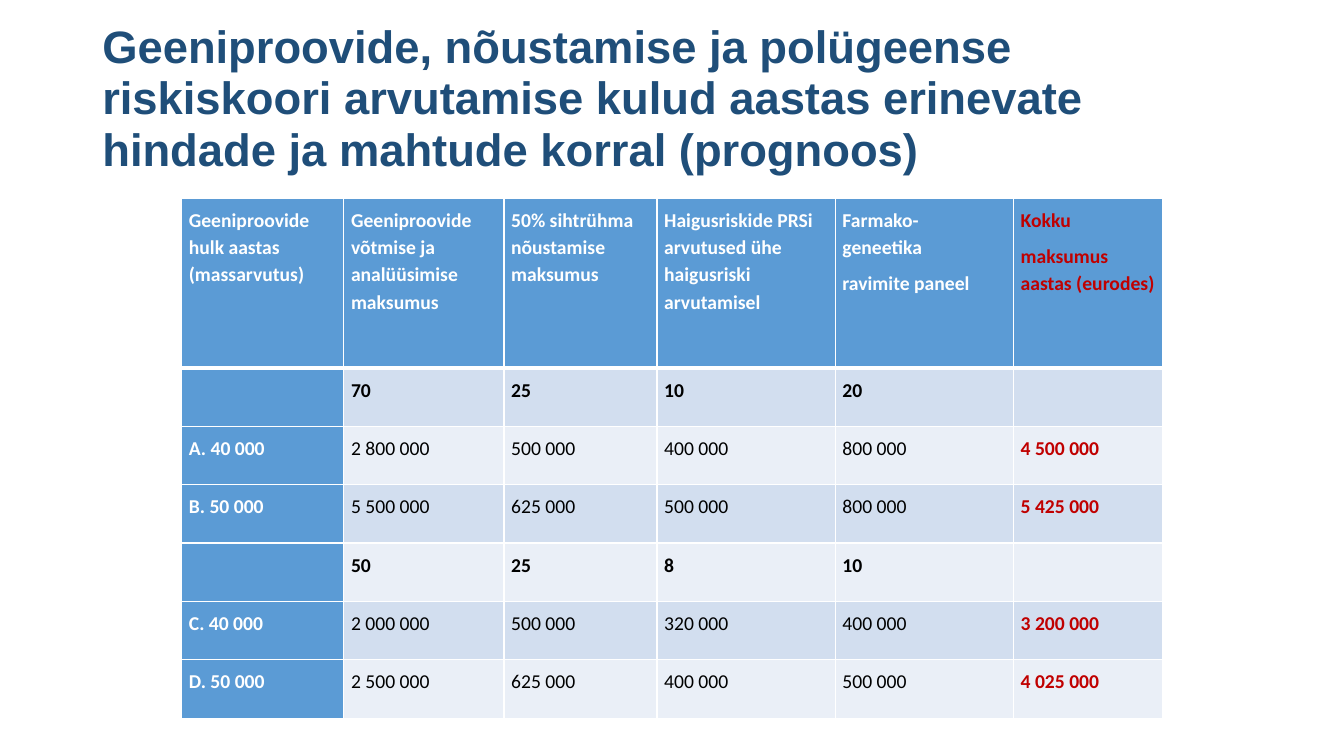
from dataclasses import dataclass

from lxml.etree import SubElement
from pptx import Presentation
from pptx.dml.color import RGBColor as Rgb
from pptx.enum.text import MSO_ANCHOR as Anchor, PP_ALIGN as Align
from pptx.oxml.ns import qn
from pptx.util import Cm, Pt


@dataclass(frozen=True)
class Theme:
    title_font: str = "Arial"
    table_font: str = "Calibri"
    title_size: float = 32.4
    table_size: float = 14
    title: str = "1F4E79"
    head: str = "5B9BD5"
    bands: tuple = ("EAEFF7", "D2DEEF")
    light: str = "FFFFFF"
    dark: str = "000000"
    total: str = "C00000"
    thin: float = 1
    thick: float = 3


THEME = Theme()

TITLE = ("Geeniproovide, nõustamise ja polügeense riskiskoori arvutamise kulud "
         "aastas erinevate hindade ja mahtude korral (prognoos)")

# Each cell is a list of paragraphs; \v is a line break
HEADINGS = [
    ["Geeniproovide hulk aastas (massarvutus)"],
    ["Geeniproovide võtmise ja analüüsimise maksumus"],
    ["50% sihtrühma nõustamise maksumus"],
    ["Haigusriskide PRSi arvutused ühe haigusriski arvutamisel"],
    ["Farmako-\vgeneetika", "ravimite paneel"],
    ["Kokku", "maksumus aastas (eurodes)"],
]
COSTS = [
    ["", "70", "25", "10", "20", ""],
    ["A. 40 000", "2 800 000", "500 000", "400 000", "800 000", "4 500 000"],
    ["B. 50 000", "5 500 000", "625 000", "500 000", "800 000", "5 425 000"],
    ["", "50", "25", "8", "10", ""],
    ["C. 40 000", "2 000 000", "500 000", "320 000", "400 000", "3 200 000"],
    ["D. 50 000", "2 500 000", "625 000", "400 000", "500 000", "4 025 000"],
]
COLUMN_SHARES = [1.61, 1.59, 1.52, 1.77, 1.77, 1.48]
HEAD_SHARE = 0.326


def set_attributes(target, values):
    for name, value in values.items():
        setattr(target, name, value)


def style_font(font, name, size, color, bold):
    set_attributes(font, {"name": name, "size": Pt(size), "bold": bold})
    font.color.rgb = Rgb.from_string(color)


def add_title(page, left, top, width, height):
    box = page.shapes.add_textbox(left, top, width, height)
    frame = box.text_frame
    # The bottom margin lifts the centred text above the table
    set_attributes(frame, {"word_wrap": True, "vertical_anchor": Anchor.MIDDLE,
                           "margin_top": 0, "margin_bottom": Cm(0.68)})
    para = frame.paragraphs[0]
    para.line_spacing = 0.94
    span = para.add_run()
    span.text = TITLE
    style_font(span.font, THEME.title_font, THEME.title_size, THEME.title, True)


def set_borders(cell, widths):
    """Draw white borders; widths are in points, per side."""
    properties = cell._tc.get_or_add_tcPr()
    for index, (side, width) in enumerate(widths.items()):
        line = properties.makeelement(qn(f"a:ln{side}"), {"w": str(Pt(width))})
        fill = SubElement(line, qn("a:solidFill"))
        SubElement(fill, qn("a:srgbClr"), val=THEME.light)
        properties.insert(index, line)


def fill_cell(cell, paragraphs, row, column):
    is_head, is_label = row == 0, column == 0
    is_total = column == len(HEADINGS) - 1
    is_price_row = not is_head and not COSTS[row - 1][0]

    # Colours follow the role of the row and the column
    background = THEME.head if is_head or is_label else THEME.bands[row % 2]
    color = (THEME.total if is_total
             else THEME.light if is_head or is_label else THEME.dark)
    bold = is_head or is_label or is_total or is_price_row
    cell.fill.solid()
    cell.fill.fore_color.rgb = Rgb.from_string(background)
    set_borders(cell, {"L": THEME.thin, "R": THEME.thin,
                       "T": THEME.thick if row == 1 else THEME.thin,
                       "B": THEME.thick if is_head else THEME.thin})

    # Text
    margin = Cm(0.18)
    set_attributes(cell, {"margin_left": margin, "margin_right": margin,
                          "margin_top": margin, "margin_bottom": margin,
                          "vertical_anchor": Anchor.TOP})
    frame = cell.text_frame
    for index, text in enumerate(paragraphs):
        para = frame.add_paragraph() if index else frame.paragraphs[0]
        para.text = text
        set_attributes(para, {"line_spacing": 1.14,
                              "alignment": Align.LEFT if is_head else Align.JUSTIFY})
        if index:
            para.space_before = Pt(6)
        for font in [para.font, *(span.font for span in para.runs)]:
            style_font(font, THEME.table_font, THEME.table_size, color, bold)


def add_cost_table(page, left, top, width, height):
    rows = [HEADINGS] + [[[text] for text in line] for line in COSTS]
    table = page.shapes.add_table(len(rows), len(HEADINGS),
                                  left, top, width, height).table

    # Column widths and row heights share out the box
    for column, share in zip(table.columns, COLUMN_SHARES):
        column.width = int(width * share / sum(COLUMN_SHARES))
    head_height = int(height * HEAD_SHARE)
    for index, row in enumerate(table.rows):
        row.height = (height - head_height) // len(COSTS) if index else head_height

    for row, line in enumerate(rows):
        for column, paragraphs in enumerate(line):
            fill_cell(table.cell(row, column), paragraphs, row, column)


def main():
    deck = Presentation()
    set_attributes(deck, {"slide_width": Cm(33.87), "slide_height": Cm(19.05)})
    page = deck.slides.add_slide(deck.slide_layouts[6])
    add_title(page, Cm(2.33), Cm(1.01), Cm(29.21), Cm(3.68))
    add_cost_table(page, Cm(4.58), Cm(5), Cm(24.72), Cm(13.1))
    deck.save("out.pptx")


if __name__ == "__main__":
    main()
